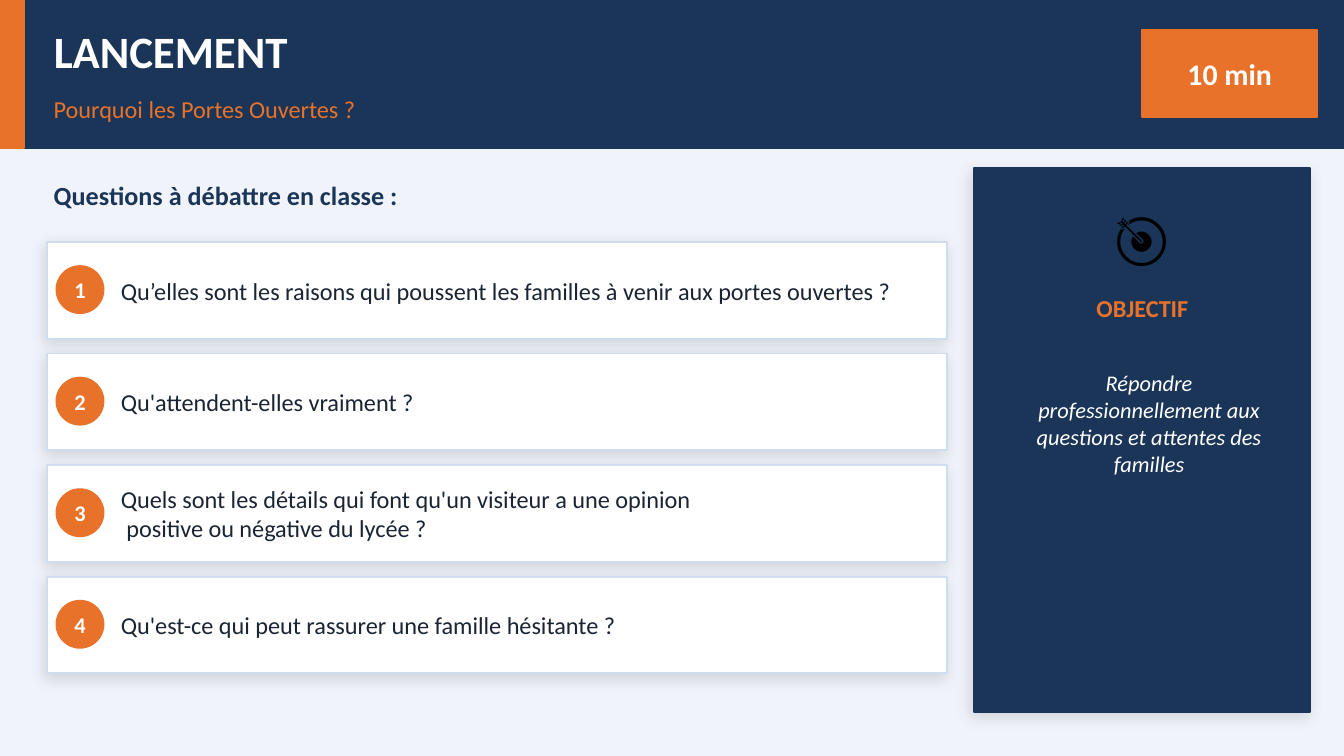
from dataclasses import dataclass

from lxml.etree import SubElement
from pptx import Presentation
from pptx.dml.color import RGBColor
from pptx.enum.shapes import MSO_SHAPE as Shape
from pptx.enum.text import MSO_ANCHOR as Anchor, MSO_AUTO_SIZE as AutoSize, PP_ALIGN as Align
from pptx.oxml.ns import qn
from pptx.util import Pt


@dataclass(frozen=True)
class Theme:
    font: str = "Calibri"
    icon_font: str = "Cabin"
    navy: str = "1A3557"
    orange: str = "E8722A"
    white: str = "FFFFFF"
    ink: str = "1A2433"
    black: str = "000000"
    border: str = "D0DCF0"
    background: str = "F0F4FA"
    title: int = 24
    badge: int = 16
    heading: int = 14
    body: int = 13
    small: int = 12
    icon: int = 28


THEME = Theme()

QUESTIONS = [
    ["Qu’elles sont les raisons qui poussent les familles à venir aux portes ouvertes ?"],
    ["Qu'attendent-elles vraiment ?"],
    ["Quels sont les détails qui font qu'un visiteur a une opinion",
     " positive ou négative du lycée ?"],
    ["Qu'est-ce qui peut rassurer une famille hésitante ?"],
]


def place(box, left, top, width, height):
    box.left, box.top = Pt(left), Pt(top)
    box.width, box.height = Pt(width), Pt(height)


def write(box, *lines, size=THEME.body, color=THEME.ink, font=THEME.font,
          bold=False, italic=False, align=Align.LEFT):
    frame = box.text_frame
    frame.auto_size = AutoSize.NONE
    frame.word_wrap = True
    frame.vertical_anchor = Anchor.MIDDLE
    frame.margin_left = frame.margin_right = 0
    frame.margin_top = frame.margin_bottom = 0
    for index, line in enumerate(lines):
        para = frame.add_paragraph() if index else frame.paragraphs[0]
        para.alignment = align
        span = para.add_run()
        span.text = line
        span.font.name = font
        span.font.size = Pt(size)
        span.font.bold = bold
        span.font.italic = italic
        span.font.color.rgb = RGBColor.from_string(color)


def add_text(page, area, *lines, **style):
    box = page.shapes.add_textbox(*map(Pt, area))
    write(box, *lines, **style)
    return box


def add_panel(page, area, fill, line=None, kind=Shape.RECTANGLE):
    panel = page.shapes.add_shape(kind, *map(Pt, area))
    panel.shadow.inherit = False
    panel.fill.solid()
    panel.fill.fore_color.rgb = RGBColor.from_string(fill)
    panel.line.color.rgb = RGBColor.from_string(line or fill)
    panel.line.width = Pt(1)
    return panel


def add_shadow(panel):
    effects = panel._element.spPr.find(qn("a:effectLst"))
    shadow = SubElement(effects, qn("a:outerShdw"), blurRad=str(Pt(8)), dist=str(Pt(3)),
                        dir=str(135 * 60000), algn="bl", rotWithShape="0")
    color = SubElement(shadow, qn("a:srgbClr"), val=THEME.black)
    SubElement(color, qn("a:alpha"), val="13000")


def add_header(page):
    add_panel(page, (0, 0, 720, 79.2), THEME.navy)
    add_panel(page, (0, 0, 12.96, 79.2), THEME.orange)
    title = page.shapes.title
    page.shapes._spTree.append(title._element)
    place(title, 28.8, 7.2, 504, 39.6)
    write(title, "LANCEMENT", size=THEME.title, color=THEME.white, bold=True)
    add_text(page, (28.8, 44.64, 504, 27.36), "Pourquoi les Portes Ouvertes ?",
             color=THEME.orange)
    badge = add_panel(page, (612, 15.84, 93.6, 46.8), THEME.orange)
    write(badge, "10 min", size=THEME.badge, color=THEME.white, bold=True, align=Align.CENTER)


def add_question(page, number, lines, top):
    card = add_panel(page, (25.2, top, 482.4, 51.84), THEME.white, THEME.border)
    add_shadow(card)
    disc = add_panel(page, (30.24, top + 12.96, 25.2, 25.2), THEME.orange, kind=Shape.OVAL)
    write(disc, str(number), size=THEME.small, color=THEME.white, bold=True, align=Align.CENTER)
    add_text(page, (64.8, top + 7.2, 424.8, 37.44), *lines)


def add_objective(page):
    panel = add_panel(page, (522, 90, 180, 291.6), THEME.navy)
    add_shadow(panel)
    add_text(page, (522, 104.4, 180, 43.2), "🎯", size=THEME.icon, color=THEME.black,
             font=THEME.icon_font, align=Align.CENTER)
    add_text(page, (522, 151.2, 180, 27.36), "OBJECTIF", color=THEME.orange,
             bold=True, align=Align.CENTER)
    add_text(page, (543.6, 122.4, 144, 208.8),
             "Répondre professionnellement aux questions et attentes des familles",
             size=THEME.small, color=THEME.white, italic=True, align=Align.CENTER)


def main():
    deck = Presentation()
    deck.slide_width, deck.slide_height = Pt(720), Pt(405)
    page = deck.slides.add_slide(deck.slide_layouts[5])
    page.background.fill.solid()
    page.background.fill.fore_color.rgb = RGBColor.from_string(THEME.background)
    add_header(page)
    add_text(page, (28.8, 90, 468, 28.8), "Questions à débattre en classe :",
             size=THEME.heading, color=THEME.navy, bold=True)
    for index, lines in enumerate(QUESTIONS):
        add_question(page, index + 1, lines, 129.6 + index * 59.76)
    add_objective(page)
    deck.save("out.pptx")


if __name__ == "__main__":
    main()
